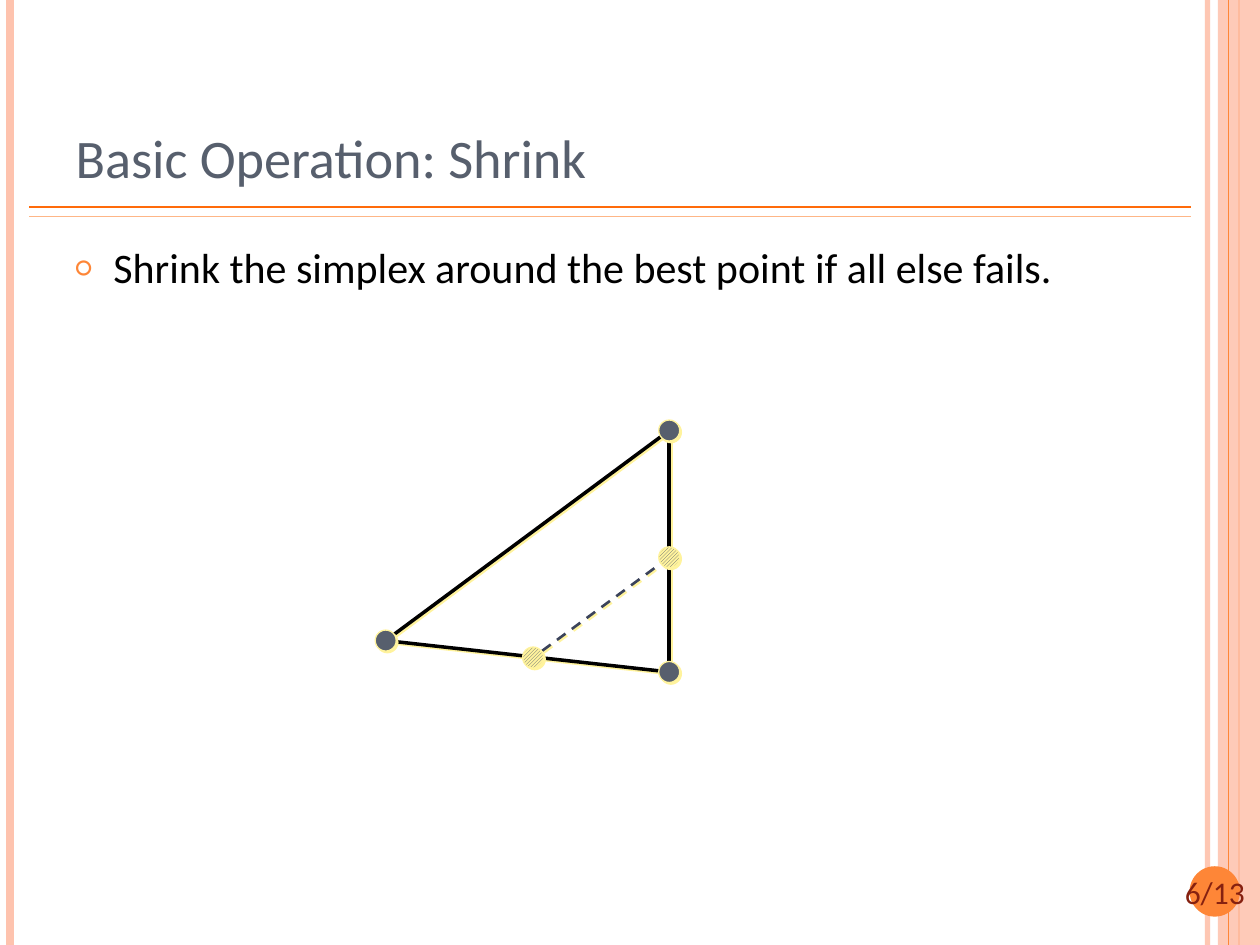
from lxml.etree import SubElement
from pptx import Presentation
from pptx.dml.color import RGBColor
from pptx.enum.dml import MSO_LINE, MSO_PATTERN
from pptx.enum.shapes import MSO_CONNECTOR, MSO_SHAPE
from pptx.enum.text import MSO_ANCHOR, MSO_AUTO_SIZE, PP_ALIGN
from pptx.oxml.ns import qn
from pptx.util import Pt

WIDTH, HEIGHT = 720, 540
GLOW, SLATE, ORANGE, PEACH = "FFF39D", "575F6D", "FE8637", "FEC3AE"


def color(code):
    return RGBColor.from_string(code)


def add(parent, tag, **values):
    return SubElement(parent, qn(tag), values)


def fade(part, percent):
    for node in part.iter(qn("a:srgbClr")):
        add(node, "a:alpha", val=str(percent * 1000))


def glow(effects):
    shade = add(effects, "a:outerShdw", blurRad="0", dist=str(Pt(1.4)),
                dir="2700000", algn="tl", rotWithShape="0")
    add(shade, "a:srgbClr", val=GLOW)


def rule(shapes, start, end, code, width, lit=False):
    line = shapes.add_connector(MSO_CONNECTOR.STRAIGHT, *map(Pt, start + end))
    line.line.color.rgb = color(code)
    line.line.width = Pt(width)
    effects = add(line._element.spPr, "a:effectLst")
    if lit:
        glow(effects)
    return line


def block(shapes, kind, left, top, width, height, code):
    shape = shapes.add_shape(kind, Pt(left), Pt(top), Pt(width), Pt(height))
    shape.shadow.inherit = False
    shape.fill.solid()
    shape.fill.fore_color.rgb = color(code)
    shape.line.fill.background()
    return shape


def dot(shapes, center, hatched=False):
    size = 12
    x, y = center
    shape = block(shapes, MSO_SHAPE.OVAL, x - size / 2, y - size / 2, size, size, SLATE)
    if hatched:
        shape.fill.patterned()
        shape.fill.pattern = MSO_PATTERN.LIGHT_UPWARD_DIAGONAL
        shape.fill.fore_color.rgb = color(SLATE)
        shape.fill.back_color.rgb = color(GLOW)
    shape.line.color.rgb = color(GLOW)
    shape.line.width = Pt(0.75)
    glow(shape._element.spPr.find(qn("a:effectLst")))


def write(shape, box, text, size, code, anchor, align):
    shape.left, shape.top, shape.width, shape.height = map(Pt, box)
    frame = shape.text_frame
    frame.text = text
    para = frame.paragraphs[0]
    looks = {
        frame: {"word_wrap": True, "auto_size": MSO_AUTO_SIZE.NONE,
                "vertical_anchor": anchor},
        para: {"alignment": align, "space_before": Pt(0)},
        para.runs[0].font: {"name": "Calibri", "size": Pt(size)},
    }
    for part, values in looks.items():
        for name, value in values.items():
            setattr(part, name, value)
    para.runs[0].font.color.rgb = color(code)
    return para


def frame(shapes, width, height):
    edge = rule(shapes, (690, 0), (690, height), PEACH, 3)
    fade(edge._element.spPr, 93)
    rule(shapes, (5.76, 0), (5.76, height), PEACH, 4.5)
    rule(shapes, (708, 0), (708, height), ORANGE, 1.5)
    band = block(shapes, MSO_SHAPE.RECTANGLE, 696, 0, width - 696, height, PEACH)
    fade(band._element.spPr, 87)
    rule(shapes, (702, 0), (702, height), ORANGE, 0.75)
    for y, code in ((118.2, "FF6B0A"), (123.8, "FEB687")):
        rule(shapes, (16.8, y), (680.4, y), code, 1)


def badge(shapes, left, top, size, text):
    block(shapes, MSO_SHAPE.OVAL, left, top, size, size, ORANGE)
    wide = 65.5
    box = (left + size / 2 - wide / 2, top, wide, size)
    label = shapes.add_textbox(*map(Pt, box))
    write(label, box, text, 18, "862110", MSO_ANCHOR.MIDDLE, PP_ALIGN.CENTER)


def bullet(para, mark, code, percent, indent):
    props = para._p.get_or_add_pPr()
    props.set("marL", str(Pt(indent)))
    props.set("indent", str(Pt(-indent)))
    add(add(props, "a:buClr"), "a:srgbClr", val=code)
    add(props, "a:buSzPct", val=str(percent * 1000))
    add(props, "a:buFont", typeface="Calibri")
    add(props, "a:buChar", char=mark)


def simplex(shapes, left, top, width, height):
    apex = (left + width, top)
    best = (left + width, top + height)
    worst = (left, top + height * 0.87)
    mids = ((left + width, top + height * 0.525),
            (left + width * 0.52, top + height * 0.94))
    cut = rule(shapes, *mids, "3B435B", 1.5, True)
    cut.line.dash_style = MSO_LINE.DASH
    group = shapes.add_group_shape().shapes
    for start, end in ((worst, apex), (worst, best), (best, apex)):
        rule(group, start, end, "000000", 2, True)
    for point in (best, worst, apex):
        dot(group, point)
    for point in mids:
        dot(shapes, point, True)


def main():
    deck = Presentation()
    deck.slide_width, deck.slide_height = Pt(WIDTH), Pt(HEIGHT)
    slide = deck.slides.add_slide(deck.slide_layouts[1])
    shapes = slide.shapes
    frame(shapes, WIDTH, HEIGHT)
    badge(shapes, 679.8, 495, 28.8, "6/13")
    para = write(slide.placeholders[1], (36, 134.6, 588, 375),
                 "Shrink the simplex around the best point if all else fails.",
                 24, "000000", MSO_ANCHOR.TOP, PP_ALIGN.LEFT)
    bullet(para, "○", ORANGE, 70, 21.6)
    write(shapes.title, (36, 21.6, 588, 90), "Basic Operation: Shrink",
          31, SLATE, MSO_ANCHOR.BOTTOM, PP_ALIGN.LEFT)
    simplex(shapes, 220.4, 246, 162, 138)
    deck.save("out.pptx")


if __name__ == "__main__":
    main()
